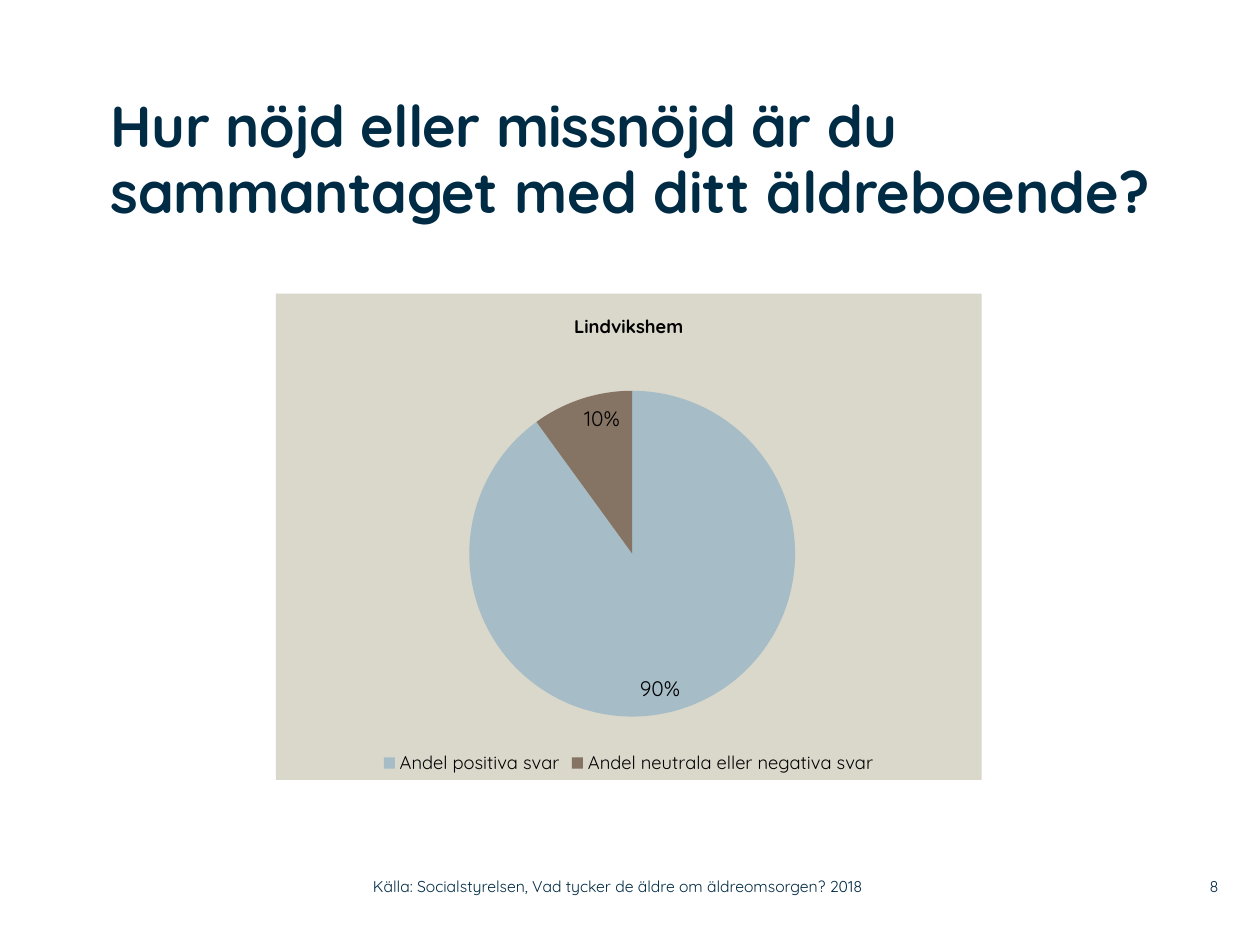
from lxml import etree
from pptx import Presentation
from pptx.chart.data import CategoryChartData
from pptx.dml.color import RGBColor
from pptx.enum.chart import XL_CHART_TYPE, XL_LABEL_POSITION, XL_LEGEND_POSITION
from pptx.enum.text import MSO_ANCHOR, MSO_AUTO_SIZE, PP_ALIGN
from pptx.oxml import parse_xml
from pptx.oxml.ns import nsdecls, qn
from pptx.util import Inches, Pt

FONT = "Quicksand"
NAVY = RGBColor(0x00, 0x2B, 0x45)
BLACK = RGBColor(0x00, 0x00, 0x00)
SAND = RGBColor(0xDA, 0xD7, 0xCB)
ANSWERS = {
    "Andel positiva svar": (90, RGBColor(0xA6, 0xBC, 0xC6)),
    "Andel neutrala eller negativa svar": (10, RGBColor(0x85, 0x73, 0x63)),
}
PIE_LAYOUT = {"x": 0.27, "y": 0.2, "w": 0.47, "h": 0.67}


def set_font(font, size, color, bold=False):
    for name, value in {"name": FONT, "size": Pt(size), "bold": bold}.items():
        setattr(font, name, value)
    font.color.rgb = color


def set_frame(frame, anchor):
    settings = {
        "margin_left": 0, "margin_right": 0, "margin_top": 0, "margin_bottom": 0,
        "word_wrap": True, "auto_size": MSO_AUTO_SIZE.NONE, "vertical_anchor": anchor,
    }
    for name, value in settings.items():
        setattr(frame, name, value)


def place_title(slide, left, top, width, height):
    title = slide.shapes.title
    title.left, title.top, title.width, title.height = left, top, width, height
    set_frame(title.text_frame, MSO_ANCHOR.TOP)
    paragraph = title.text_frame.paragraphs[0]
    paragraph.alignment = PP_ALIGN.LEFT
    paragraph.line_spacing = 0.95
    parts = {"Hur nöjd eller missnöjd är du sammantaget ": -30, "med ditt äldreboende?": 0}
    for text, spacing in parts.items():
        run = paragraph.add_run()
        run.text = text
        set_font(run.font, 33, NAVY, bold=True)
        run.font._element.set("spc", str(spacing))


def place_note(slide, text, alignment, left, top, width, height):
    """Add one small line of footer text."""
    note = slide.shapes.add_textbox(left, top, width, height)
    set_frame(note.text_frame, MSO_ANCHOR.MIDDLE)
    paragraph = note.text_frame.paragraphs[0]
    paragraph.alignment = alignment
    run = paragraph.add_run()
    run.text = text
    set_font(run.font, 9, NAVY)


def fix_pie_layout(plot_area):
    """Pin the pie to fixed fractions of the chart area."""
    for layout in plot_area.findall(qn("c:layout")):
        plot_area.remove(layout)
    layout = parse_xml(f"<c:layout {nsdecls('c')}><c:manualLayout/></c:layout>")
    manual = layout[0]
    settings = {"layoutTarget": "inner", "xMode": "edge", "yMode": "edge", **PIE_LAYOUT}
    for name, value in settings.items():
        etree.SubElement(manual, qn(f"c:{name}")).set("val", str(value))
    plot_area.insert(0, layout)


def fill_chart_area(chart_space, color):
    area = parse_xml(
        f"<c:spPr {nsdecls('c', 'a')}><a:solidFill><a:srgbClr val=\"{color}\"/></a:solidFill>"
        "<a:ln><a:noFill/></a:ln></c:spPr>"
    )
    chart_space.find(qn("c:chart")).addnext(area)


def place_satisfaction_pie(slide, left, top, width, height):
    data = CategoryChartData()
    data.categories = list(ANSWERS)
    data.add_series("Series 1", [share for share, _ in ANSWERS.values()])
    chart = slide.shapes.add_chart(
        XL_CHART_TYPE.PIE, left, top, width, height, data
    ).chart
    set_font(chart.font, 18, BLACK)
    fill_chart_area(chart._chartSpace, SAND)
    fix_pie_layout(chart._chartSpace.chart.plotArea)

    chart.has_title = True
    heading = chart.chart_title.text_frame.paragraphs[0].add_run()
    heading.text = "Lindvikshem"
    set_font(heading.font, 10.5, BLACK, bold=True)
    chart.chart_title.include_in_layout = False

    chart.has_legend = True
    chart.legend.position = XL_LEGEND_POSITION.BOTTOM
    chart.legend.include_in_layout = False
    set_font(chart.legend.font, 10.5, BLACK)

    plot = chart.plots[0]
    plot.vary_by_categories = True
    for index, (_, color) in enumerate(ANSWERS.values()):
        fill = plot.series[0].points[index].format.fill
        fill.solid()
        fill.fore_color.rgb = color
    labels = plot.series[0].data_labels
    label_settings = {
        "show_percentage": True, "show_value": False, "number_format": "0%",
        "number_format_is_linked": False, "position": XL_LABEL_POSITION.INSIDE_END,
    }
    for name, value in label_settings.items():
        setattr(labels, name, value)
    set_font(labels.font, 12, BLACK)


def main():
    deck = Presentation()
    deck.slide_width, deck.slide_height = Inches(10), Inches(7.5)
    slide = deck.slides.add_slide(deck.slide_layouts.get_by_name("Title Only"))
    place_title(slide, Inches(0.88), Inches(0.75), Inches(8.83), Inches(1.42))
    place_satisfaction_pie(slide, Inches(2.19), Inches(2.33), Inches(5.6), Inches(3.86))
    footer_top, footer_height = Inches(6.89), Inches(0.29)
    place_note(slide, "Källa: Socialstyrelsen, Vad tycker de äldre om äldreomsorgen? 2018",
               PP_ALIGN.LEFT, Inches(2.96), footer_top, Inches(4.43), footer_height)
    place_note(slide, "8", PP_ALIGN.RIGHT,
               Inches(9.2), footer_top, Inches(0.47), footer_height)
    deck.save("out.pptx")


if __name__ == "__main__":
    main()
